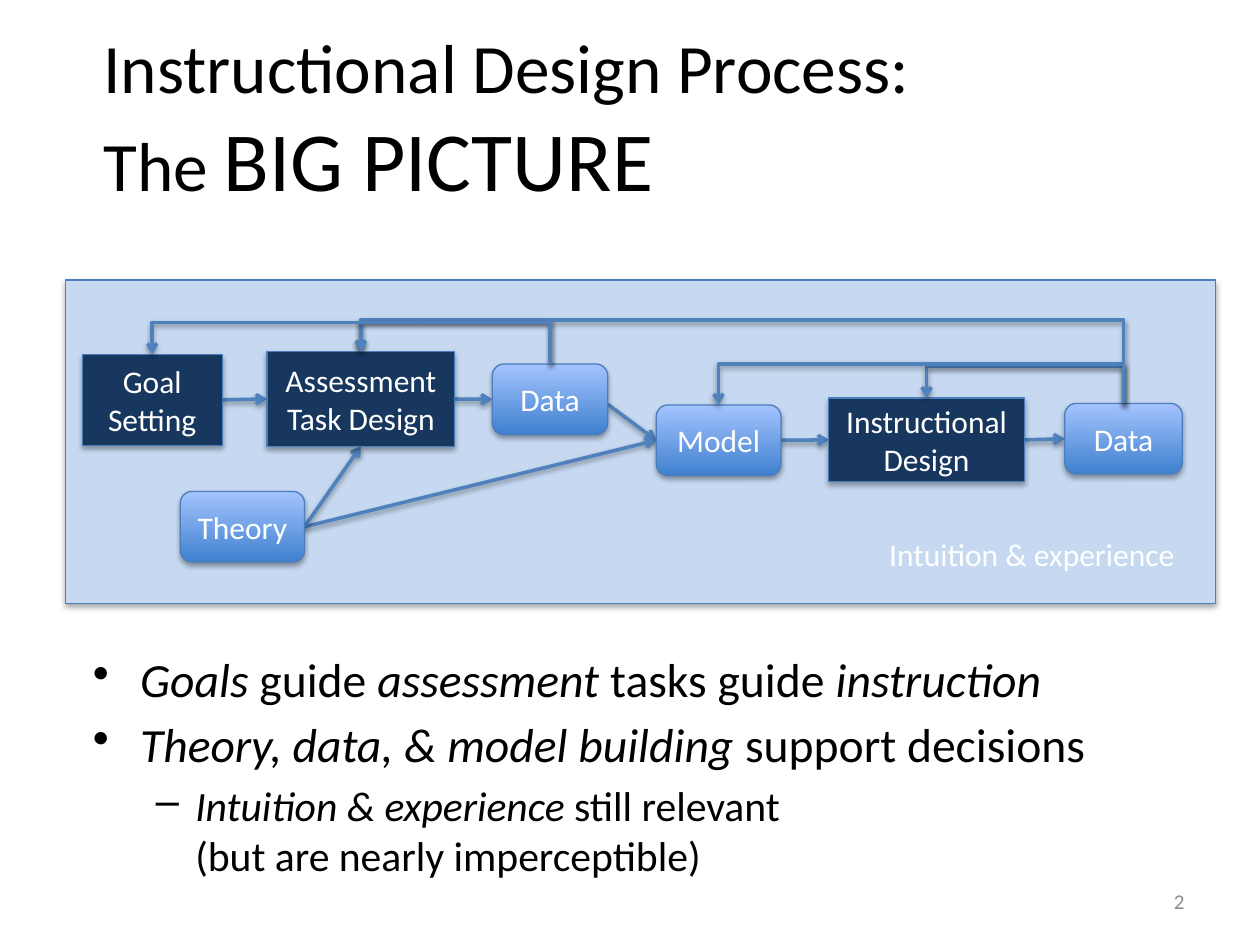
from lxml import etree
from pptx import Presentation
from pptx.dml.color import RGBColor
from pptx.enum.shapes import MSO_CONNECTOR, MSO_SHAPE
from pptx.enum.text import MSO_ANCHOR, PP_ALIGN
from pptx.oxml.ns import qn
from pptx.util import Pt

PROCESS = MSO_SHAPE.FLOWCHART_PROCESS
ROUNDED = MSO_SHAPE.FLOWCHART_ALTERNATE_PROCESS
STRAIGHT, ELBOW = MSO_CONNECTOR.STRAIGHT, MSO_CONNECTOR.ELBOW
TOP, MIDDLE = MSO_ANCHOR.TOP, MSO_ANCHOR.MIDDLE
LEFT, CENTER, RIGHT = PP_ALIGN.LEFT, PP_ALIGN.CENTER, PP_ALIGN.RIGHT

FONT = "Calibri"
COLORS = {
    "text": "000000", "light": "FFFFFF", "number": "8C8C8C", "panel": "C6D9F1",
    "process": "17375E", "outline": "4B7EBC", "arrow": "4F81BD",
    "grad_low": "3F80CE", "grad_high": "A4C4FF", "shadow": "000000",
}

# Runs are (text, size, italic); a newline is a line break.
TITLE = [("Instructional Design Process:\nThe ", 39.6, False), ("BIG PICTURE", 48, False)]
# Each bullet: mark, left margin, hanging indent, runs
BULLETS = [
    ("•", 27, 27, [("Goals ", 27.2, True), ("guide ", 27.2, False),
                   ("assessment ", 27.2, True), ("tasks guide ", 27.2, False),
                   ("instruction", 27.2, True)]),
    ("•", 27, 27, [("Theory, data, & model building", 27.2, True),
                   (" support decisions", 27.2, False)]),
    ("–", 58.5, 22.5, [("Intuition & experience", 23.8, True),
                       (" still relevant\n(but are nearly imperceptible)", 23.8, False)]),
]
PANEL = (37.4, 160, 657.4, 185)
STEPS = {
    "goal": (PROCESS, ["Goal", "Setting"], (47, 202.5, 80, 52)),
    "assessment": (PROCESS, ["Assessment Task Design"], (152.5, 201, 107.4, 54)),
    "instruction": (PROCESS, ["Instructional Design"], (473.6, 227.5, 111.8, 47.7)),
    "theory": (ROUNDED, ["Theory"], (103, 280.8, 71, 40.4)),
    "task data": (ROUNDED, ["Data"], (281.3, 208, 66, 40.4)),
    "model": (ROUNDED, ["Model"], (375, 231.4, 71.3, 40.4)),
    "final data": (ROUNDED, ["Data"], (608.4, 230.5, 67.2, 40.4)),
}
# From, to, side reached, shift of the start point
ARROWS = [
    ("goal", "assessment", "left", 0),
    ("assessment", "task data", "left", 0),
    ("task data", "model", "left", 2.8),
    ("theory", "model", "left", 0),
    ("model", "instruction", "left", 0),
    ("instruction", "final data", "left", 0),
    ("theory", "assessment", "bottom", 0),
]
# From, to, height of the horizontal part
FEEDBACK = [
    ("task data", "assessment", 182.7),
    ("final data", "instruction", 209.5),
    ("final data", "model", 208.3),
    ("final data", "assessment", 183),
    ("task data", "goal", 184.2),
]


def color(name):
    return RGBColor.from_string(COLORS[name])


def points(*values):
    return [Pt(value) for value in values]


def side_point(step, side):
    left, top, width, height = STEPS[step][2]
    across, down = {"left": (0, 0.5), "right": (1, 0.5),
                    "top": (0.5, 0), "bottom": (0.5, 1)}[side]
    return left + across * width, top + down * height


def add_shadow(shape, alpha, distance):
    properties = shape._element.spPr
    effects = properties.find(qn("a:effectLst"))
    if effects is None:
        effects = etree.SubElement(properties, qn("a:effectLst"))
    shadow = etree.SubElement(effects, qn("a:outerShdw"), blurRad=str(Pt(3.1)),
                              dist=str(Pt(distance)), dir="5400000", rotWithShape="0")
    tint = etree.SubElement(shadow, qn("a:srgbClr"), val=COLORS["shadow"])
    etree.SubElement(tint, qn("a:alpha"), val=str(alpha * 1000))


def add_runs(para, runs, ink):
    for text, size, italic in runs:
        for index, line in enumerate(text.split("\n")):
            if index:
                para.add_line_break()
            span = para.add_run()
            span.text = line
            font = span.font
            font.name, font.size, font.italic = FONT, Pt(size), italic
            font.color.rgb = color(ink)


def write(shape, paragraphs, ink, align=LEFT, anchor=TOP):
    """Fill a shape with one paragraph for each list of runs."""
    frame = shape.text_frame
    frame.word_wrap = True
    frame.vertical_anchor = anchor
    for index, runs in enumerate(paragraphs):
        para = frame.add_paragraph() if index else frame.paragraphs[0]
        para.alignment = align
        add_runs(para, runs, ink)
    return frame


def add_text(page, place, *content):
    return write(page.shapes.add_textbox(*points(*place)), *content)


def add_box(page, kind, place, fill):
    box = page.shapes.add_shape(kind, *points(*place))
    if fill == "gradient":
        box.fill.gradient()
        box.fill.gradient_angle = 90
        for stop, position, name in zip(box.fill.gradient_stops, (0, 1),
                                        ("grad_low", "grad_high")):
            stop.position, stop.color.rgb = position, color(name)
    else:
        box.fill.solid()
        box.fill.fore_color.rgb = color(fill)
    box.line.color.rgb = color("outline")
    box.line.width = Pt(0.75)
    box.shadow.inherit = False
    add_shadow(box, 35, 1.8)
    return box


def add_arrow(page, kind, start, end):
    arrow = page.shapes.add_connector(kind, *points(*start, *end))
    arrow.line.color.rgb = color("arrow")
    arrow.line.width = Pt(2)
    etree.SubElement(arrow.line._get_or_add_ln(), qn("a:tailEnd"), type="arrow")
    add_shadow(arrow, 38, 1.6)
    return arrow


def add_feedback(page, start, end, level):
    """Elbow that rises to level, runs left and drops; drawn sideways, then turned."""
    (x1, y1), (x2, y2) = start, end
    middle_x, middle_y = (x1 + x2) / 2, (y1 + y2) / 2
    rise, run = y1 - y2, x1 - x2
    arrow = add_arrow(page, ELBOW, (middle_x - rise / 2, middle_y + run / 2),
                      (middle_x + rise / 2, middle_y - run / 2))
    properties = arrow._element.spPr
    properties.find(qn("a:xfrm")).set("rot", "16200000")
    geometry = properties.find(qn("a:prstGeom"))
    guides = geometry.find(qn("a:avLst"))
    if guides is None:
        guides = etree.SubElement(geometry, qn("a:avLst"))
    bend = round((y1 - level) / rise * 100000)
    etree.SubElement(guides, qn("a:gd"), name="adj1", fmla=f"val {bend}")


def main():
    deck = Presentation()
    deck.slide_width, deck.slide_height = points(720, 540)
    page = deck.slides.add_slide(deck.slide_layouts[6])

    add_text(page, (52, 21.6, 625, 90), [TITLE], "text", LEFT, MIDDLE)
    body = add_text(page, (46, 368, 620, 136), [bullet[3] for bullet in BULLETS], "text")
    for para, (mark, margin, hanging, _) in zip(body.paragraphs, BULLETS):
        para.space_before = Pt(4.5)
        properties = para._p.get_or_add_pPr()
        properties.set("marL", str(Pt(margin)))
        properties.set("indent", str(-Pt(hanging)))
        etree.SubElement(properties, qn("a:buChar"), char=mark)
    add_text(page, (516, 500.5, 168, 28.8), [[("2", 12, False)]], "number", RIGHT, MIDDLE)

    add_box(page, MSO_SHAPE.RECTANGLE, PANEL, "panel")
    for source, target, side, shift in ARROWS:
        x, y = side_point(source, "right")
        add_arrow(page, STRAIGHT, (x, y + shift), side_point(target, side))
    add_text(page, (492, 302.4, 186.3, 29), [[("Intuition & experience", 18, False)]],
             "light", RIGHT)
    for kind, lines, place in STEPS.values():
        box = add_box(page, kind, place, "process" if kind == PROCESS else "gradient")
        write(box, [[(line, 18, False)] for line in lines], "light", CENTER, MIDDLE)
    for source, target, level in FEEDBACK:
        add_feedback(page, side_point(source, "top"), side_point(target, "top"), level)

    deck.save("out.pptx")


if __name__ == "__main__":
    main()
